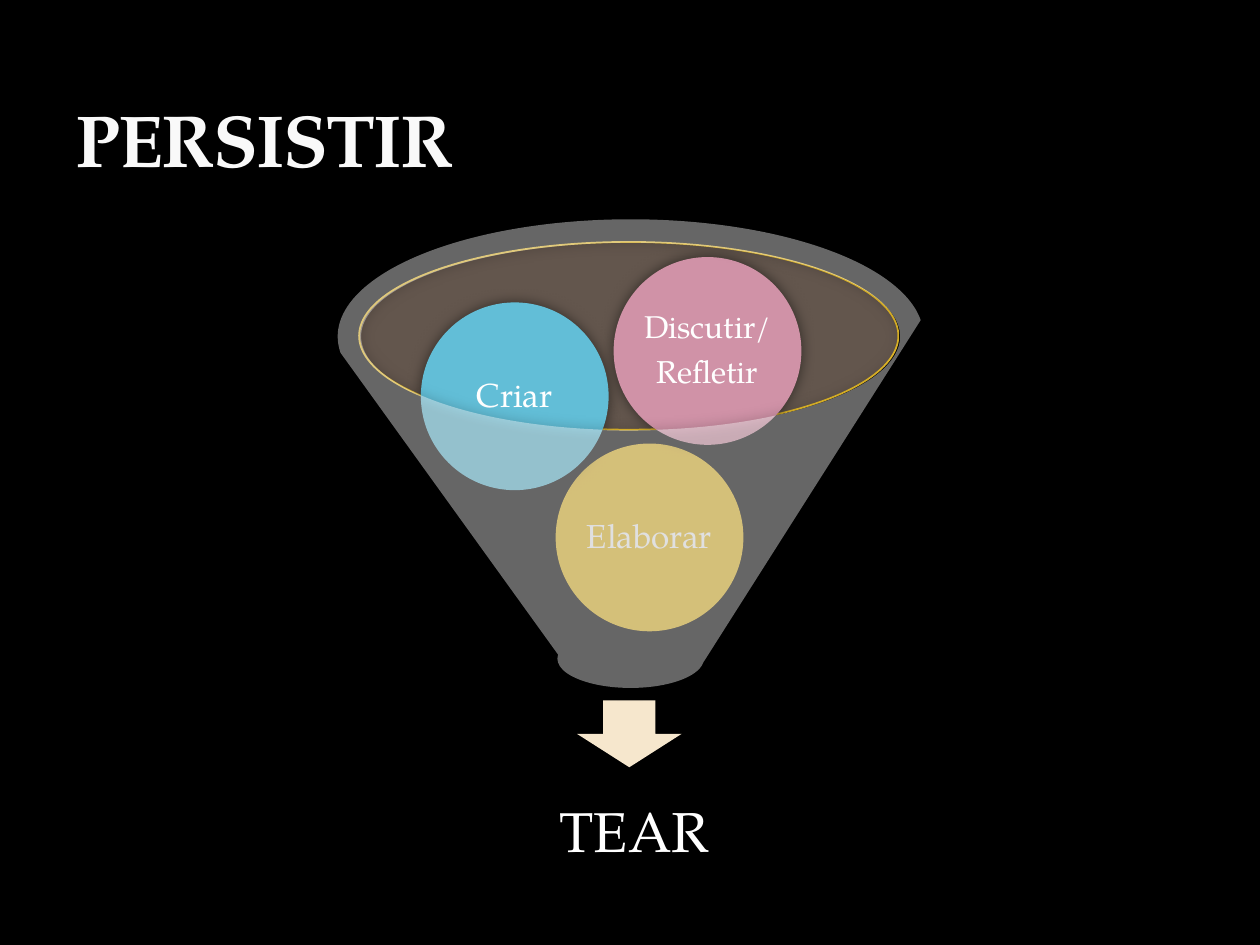
from dataclasses import dataclass

from lxml import etree
from pptx import Presentation
from pptx.dml.color import RGBColor
from pptx.enum.shapes import MSO_SHAPE
from pptx.enum.text import MSO_ANCHOR, PP_ALIGN
from pptx.oxml.ns import qn
from pptx.util import Inches, Pt

ELLIPSE, ARROW, FUNNEL = MSO_SHAPE.OVAL, MSO_SHAPE.DOWN_ARROW, MSO_SHAPE.FUNNEL
LEFT, CENTER = PP_ALIGN.LEFT, PP_ALIGN.CENTER
TOP, MIDDLE, BOTTOM = MSO_ANCHOR.TOP, MSO_ANCHOR.MIDDLE, MSO_ANCHOR.BOTTOM

COLUMNS, ROWS = 100, 75
WIDTH, HEIGHT = Inches(10), Inches(7.5)
BALL_SIZE = 14.9
FONT = "TeX Gyre Pagella"
WHITE = "FFFFFF"


@dataclass
class Box:
    col: float
    row: float
    cols: float
    rows: float

    def lengths(self) -> tuple:
        return (
            int(self.col * WIDTH / COLUMNS),
            int(self.row * HEIGHT / ROWS),
            int(self.cols * WIDTH / COLUMNS),
            int(self.rows * HEIGHT / ROWS),
        )


@dataclass
class Ball:
    text: str
    col: float
    row: float
    color: str
    size: float


BALLS = [
    Ball("Elaborar", 44.1, 35.2, "E7BC29", 19),
    Ball("Criar", 33.4, 24, "62BED7", 19),
    Ball("Discutir/\nRefletir", 48.7, 20.4, "D092A7", 18),
]


def rgb(color: str) -> RGBColor:
    return RGBColor.from_string(color)


def add_alpha(parent, percent: float) -> None:
    clr = next(parent.iter(qn("a:srgbClr")))
    etree.SubElement(clr, qn("a:alpha")).set("val", str(int(percent * 1000)))


def add_glow_shadow(sp) -> None:
    effects = sp._element.spPr.find(qn("a:effectLst"))
    shadow = etree.SubElement(effects, qn("a:outerShdw"), blurRad=str(Pt(7.5)), dist="0", dir="0")
    etree.SubElement(shadow, qn("a:srgbClr")).set("val", "000000")
    add_alpha(shadow, 50)


def add_figure(s, kind, box: Box, color: str, alpha: float = 100,
               line: str = "", shadow: bool = False):
    sp = s.shapes.add_shape(kind, *box.lengths())
    sp.shadow.inherit = False
    sp.fill.solid()
    sp.fill.fore_color.rgb = rgb(color)
    if alpha < 100:
        add_alpha(sp._element.spPr, alpha)
    if line:
        sp.line.color.rgb = rgb(line)
        sp.line.width = Pt(1)
    else:
        sp.line.fill.background()
    if shadow:
        add_glow_shadow(sp)
    return sp


def write(sp, text: str, *, size: float, color: str = WHITE, bold: bool = False,
          align=CENTER, anchor=MIDDLE, inset: float = 0.03, wrap: bool = True,
          line_spacing: float = 0.9, after: float = 0, tracking: float = 0) -> None:
    tf = sp.text_frame
    tf.word_wrap = wrap
    tf.vertical_anchor = anchor
    tf.margin_left = tf.margin_right = Inches(inset)
    tf.margin_top = tf.margin_bottom = Inches(min(inset, 0.05) if anchor == BOTTOM else inset)
    for i, words in enumerate(text.split("\n")):
        p = tf.add_paragraph() if i else tf.paragraphs[0]
        p.alignment = align
        p.line_spacing = line_spacing
        p.space_after = Pt(after)
        r = p.add_run()
        r.text = words
        r.font.name = FONT
        r.font.size = Pt(size)
        r.font.bold = bold
        r.font.color.rgb = rgb(color)
        if tracking:
            r._r.get_or_add_rPr().set("spc", str(int(tracking * 100)))


def add_title(s, text: str) -> None:
    sp = s.shapes.title
    sp.left, sp.top, sp.width, sp.height = Box(5, 1.7, 90, 13.3).lengths()
    write(sp, text, size=42, color="F9F9F9", bold=True, align=LEFT, anchor=BOTTOM,
          inset=0.1, line_spacing=1, tracking=-1)


def add_ball(s, ball: Ball) -> None:
    box = Box(ball.col, ball.row, BALL_SIZE, BALL_SIZE)
    sp = add_figure(s, ELLIPSE, box, ball.color, shadow=True)
    write(sp, ball.text, size=ball.size, wrap=False, after=6)


def main() -> None:
    prs = Presentation()
    prs.slide_width, prs.slide_height = WIDTH, HEIGHT
    s = prs.slides.add_slide(prs.slide_layouts[5])
    s.background.fill.solid()
    s.background.fill.fore_color.rgb = rgb("000000")

    add_title(s, "PERSISTIR")
    add_figure(s, ELLIPSE, Box(28.5, 19.2, 42.8, 14.9), "F9D8C1", alpha=40, line="E7BC29")
    add_figure(s, ARROW, Box(45.8, 55.6, 8.3, 5.3), "F6E7CD")
    result = s.shapes.add_textbox(*Box(16.9, 61.4, 66.9, 8.4).lengths())
    write(result, "TEAR", size=32, anchor=TOP, inset=0.25)
    for ball in BALLS:
        add_ball(s, ball)
    add_figure(s, FUNNEL, Box(26.8, 17.4, 46.5, 37.2), WHITE, alpha=40, shadow=True)

    prs.save("out.pptx")


if __name__ == "__main__":
    main()
